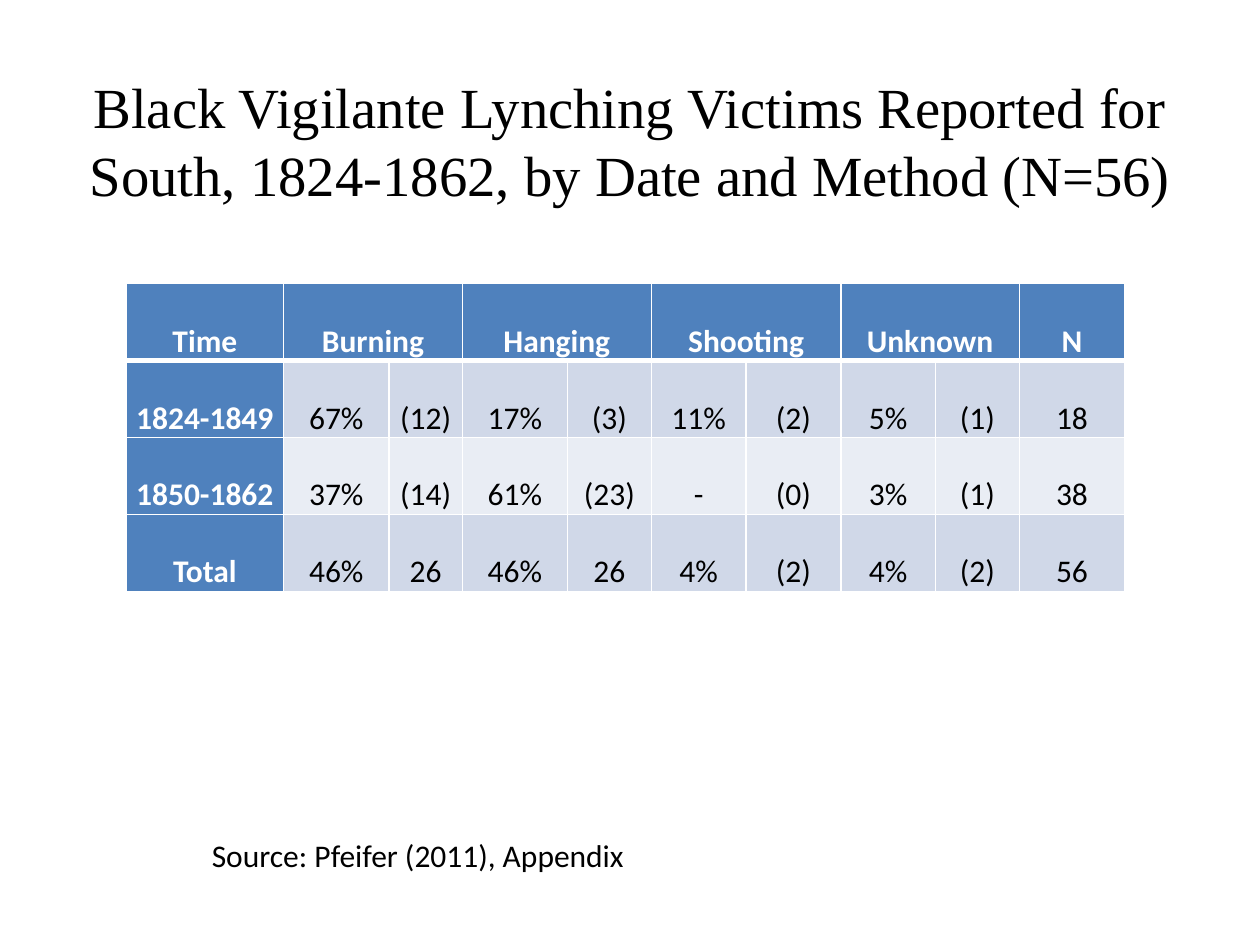
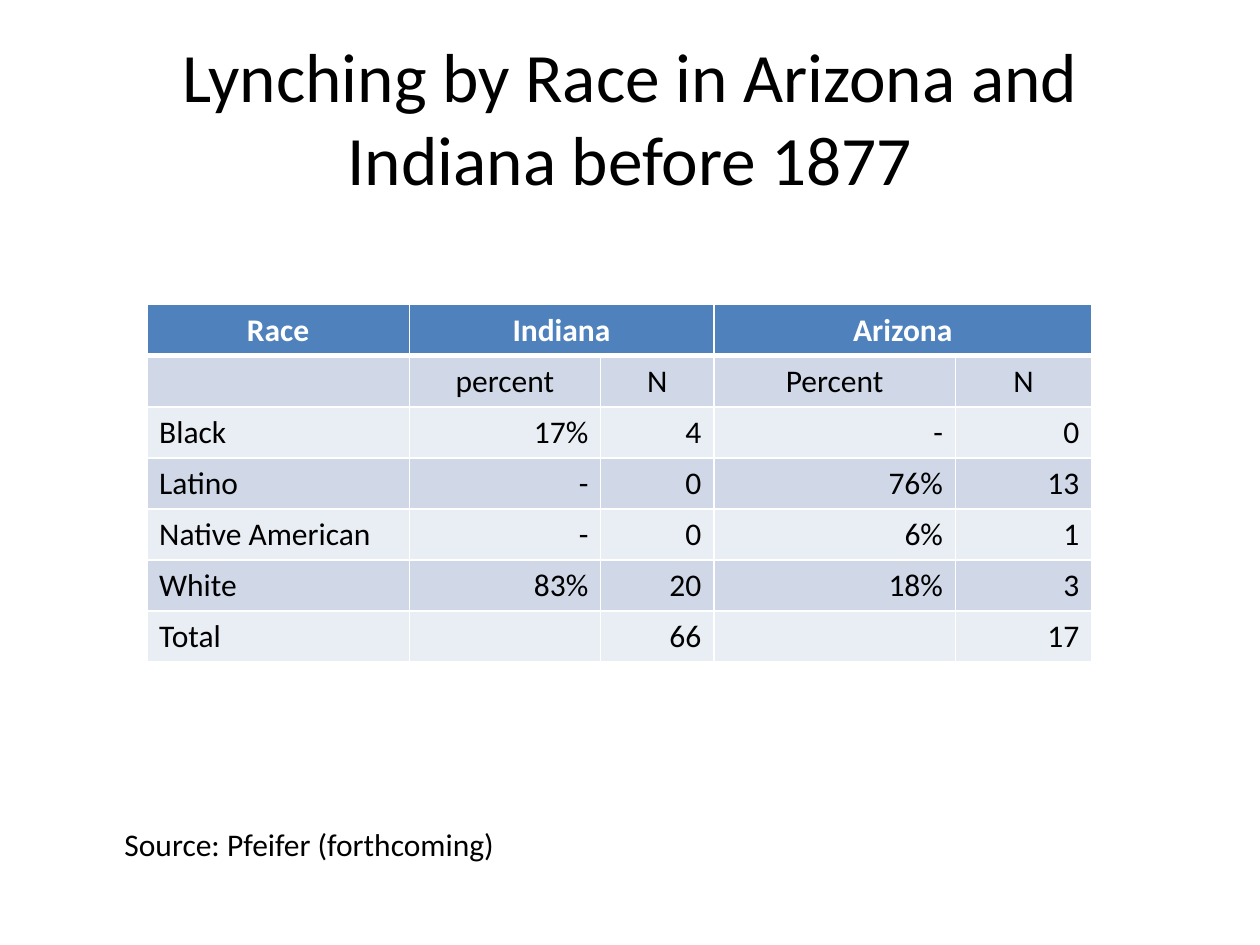
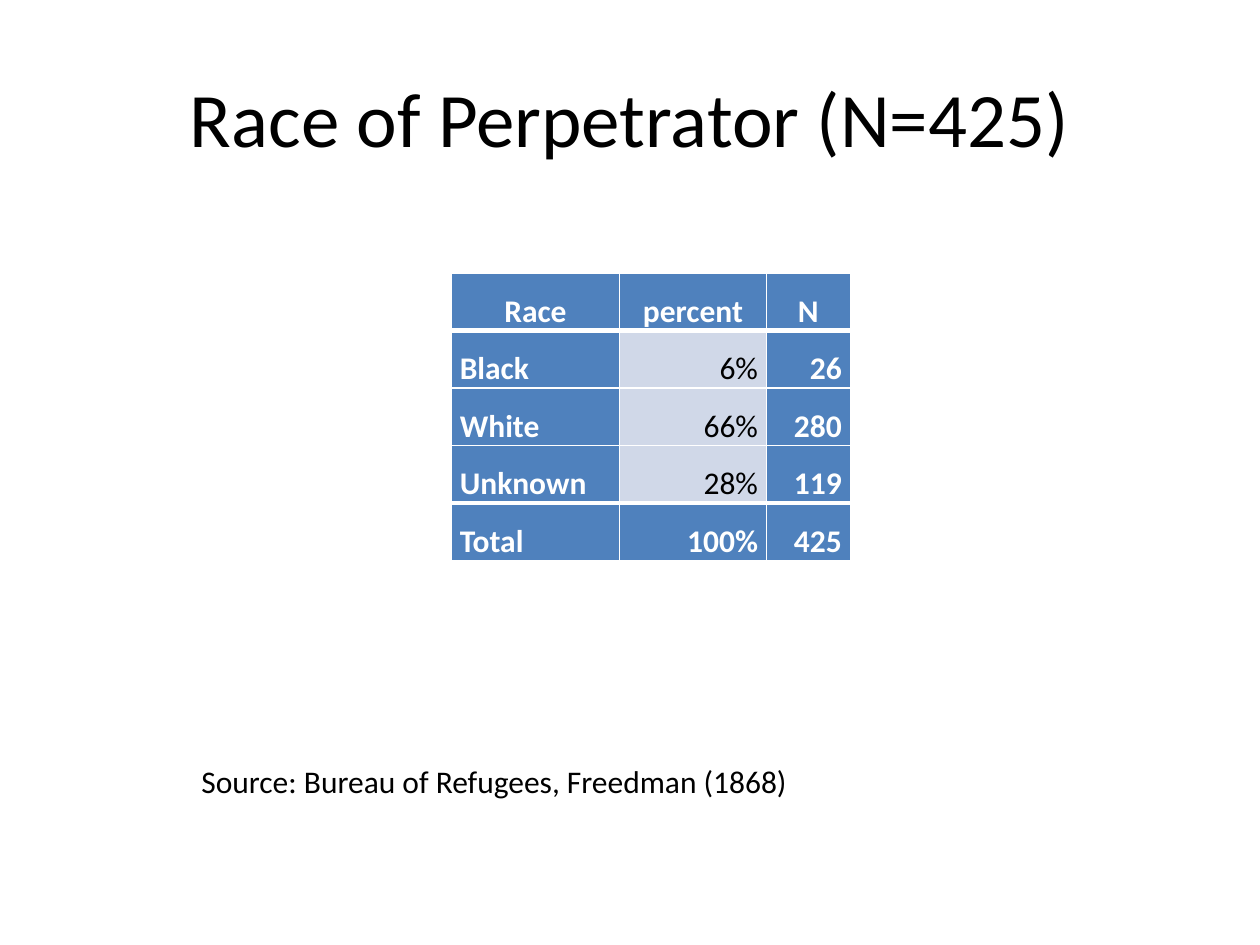
from dataclasses import dataclass

from lxml import etree
from pptx import Presentation
from pptx.dml.color import RGBColor
from pptx.enum.text import MSO_ANCHOR, PP_ALIGN
from pptx.oxml.ns import qn
from pptx.slide import Slide
from pptx.table import _Cell
from pptx.text.text import TextFrame
from pptx.util import Cm, Pt

LEFT, CENTER, RIGHT = PP_ALIGN.LEFT, PP_ALIGN.CENTER, PP_ALIGN.RIGHT
TOP, MIDDLE = MSO_ANCHOR.TOP, MSO_ANCHOR.MIDDLE

BLACK = RGBColor(0x00, 0x00, 0x00)
WHITE = RGBColor(0xFF, 0xFF, 0xFF)
ACCENT = RGBColor(0x4F, 0x81, 0xBD)
BAND_DARK = RGBColor(0xD0, 0xD8, 0xE8)
BAND_LIGHT = RGBColor(0xE9, 0xED, 0xF4)

SANS = "Calibri"
SERIF = "Times New Roman"
THIN, THICK = Pt(1), Pt(3)


@dataclass(frozen=True)
class Title:
    text: str
    size: float
    font: str = SANS
    top_margin: float = 0.13


@dataclass(frozen=True)
class SourceNote:
    text: str
    left: float
    top: float
    width: float
    wrap: bool = False


@dataclass(frozen=True)
class DataTable:
    left: float
    top: float
    row_height: float
    column_widths: tuple[float, ...]
    rows: tuple[tuple[str | None, ...], ...]
    centered_rows: int = 1
    accent_columns: tuple[int, ...] = ()
    accent_total: bool = False
    bands: tuple[RGBColor, ...] = (BAND_DARK, BAND_LIGHT)
    line_spacing: float = 1.0
    anchor: MSO_ANCHOR = TOP
    side_margin: float = 0.25
    end_margin: float = 0.13


@dataclass(frozen=True)
class TableSlide:
    title: Title
    table: DataTable
    source: SourceNote


TABLE_SLIDES = (
    TableSlide(
        Title(
            "Black Vigilante Lynching Victims Reported for South, 1824-1862, "
            "by Date and Method (N=56)",
            32.4, SERIF, top_margin=1.07,
        ),
        DataTable(
            2.54, 5.72, 1.55,
            (3.18, 2.12, 1.48, 2.12, 1.69, 1.91, 1.91, 1.91, 1.69, 2.12),
            (
                ("Time", "Burning", None, "Hanging", None,
                 "Shooting", None, "Unknown", None, "N"),
                ("1824-1849", "67%", "(12)", "17%", "(3)", "11%", "(2)", "5%", "(1)", "18"),
                ("1850-1862", "37%", "(14)", "61%", "(23)", "-", "(0)", "3%", "(1)", "38"),
                ("Total", "46%", "26", "46%", "26", "4%", "(2)", "4%", "(2)", "56"),
            ),
            centered_rows=4, accent_columns=(0,), line_spacing=2.0,
            anchor=MIDDLE, side_margin=0.17, end_margin=0,
        ),
        SourceNote("Source: Pfeifer (2011), Appendix", 4.02, 16.72, 8.92),
    ),
    TableSlide(
        Title("Lynching by Race in Arizona and Indiana before 1877", 39.6),
        DataTable(
            2.96, 6.14, 1.03,
            (5.29, 3.86, 2.28, 4.87, 2.75),
            (
                ("Race", "Indiana", None, "Arizona", None),
                ("", "percent", "N", "Percent", "N"),
                ("Black", "17%", "4", "-", "0"),
                ("Latino", "-", "0", "76%", "13"),
                ("Native American", "-", "0", "6%", "1"),
                ("White", "83%", "20", "18%", "3"),
                ("Total", "", "66", "", "17"),
            ),
            centered_rows=2,
        ),
        SourceNote("Source: Pfeifer (forthcoming)", 2.26, 16.51, 11.07, wrap=True),
    ),
    TableSlide(
        Title("Race of Perpetrator (N=425)", 44),
        DataTable(
            9.1, 5.5, 1.16,
            (3.39, 2.96, 1.69),
            (
                ("Race", "percent", "N"),
                ("Black", "6%", "26"),
                ("White", "66%", "280"),
                ("Unknown", "28%", "119"),
                ("Total", "100%", "425"),
            ),
            accent_columns=(0, 2), accent_total=True, bands=(BAND_DARK,),
            line_spacing=1.5, side_margin=0.17, end_margin=0,
        ),
        SourceNote("Source: Bureau of Refugees, Freedman (1868)", 3.81, 15.24, 12.62),
    ),
)


def write_text(
    text_frame: TextFrame,
    text: str,
    *,
    size: float = 18,
    font: str = SANS,
    color: RGBColor = BLACK,
    bold: bool = False,
    align: PP_ALIGN = LEFT,
    line_spacing: float = 1.0,
) -> None:
    paragraph = text_frame.paragraphs[0]
    paragraph.alignment = align
    paragraph.line_spacing = line_spacing
    run = paragraph.add_run()
    run.text = text
    run.font.size = Pt(size)
    run.font.name = font
    run.font.bold = bold
    run.font.color.rgb = color


def set_borders(cell: _Cell, top: int, bottom: int) -> None:
    properties = cell._tc.get_or_add_tcPr()
    widths = {"a:lnL": THIN, "a:lnR": THIN, "a:lnT": top, "a:lnB": bottom}
    for position, (tag, width) in enumerate(widths.items()):
        line = etree.Element(qn(tag), w=str(int(width)))
        fill = etree.SubElement(line, qn("a:solidFill"))
        etree.SubElement(fill, qn("a:srgbClr"), val=str(WHITE))
        properties.insert(position, line)


def draw_title(slide: Slide, title: Title) -> None:
    shape = slide.shapes.add_textbox(Cm(1.27), Cm(0.76), Cm(22.86), Cm(3.18))
    text_frame = shape.text_frame
    text_frame.word_wrap = True
    text_frame.vertical_anchor = MIDDLE
    text_frame.margin_top = Cm(title.top_margin)
    write_text(text_frame, title.text, size=title.size, font=title.font, align=CENTER)


def draw_source(slide: Slide, source: SourceNote) -> None:
    shape = slide.shapes.add_textbox(
        Cm(source.left), Cm(source.top), Cm(source.width), Cm(1.03)
    )
    shape.text_frame.word_wrap = source.wrap
    write_text(shape.text_frame, source.text)


def draw_table(slide: Slide, data: DataTable) -> None:
    row_count = len(data.rows)
    table = slide.shapes.add_table(
        row_count, len(data.column_widths), Cm(data.left), Cm(data.top),
        Cm(sum(data.column_widths)), Cm(data.row_height * row_count),
    ).table
    for column, width in zip(table.columns, data.column_widths):
        column.width = Cm(width)
    thick_edges = {1, row_count - 1} if data.accent_total else {1}
    accent_rows = {0, row_count - 1} if data.accent_total else {0}

    for row_index, values in enumerate(data.rows):
        table.rows[row_index].height = Cm(data.row_height)
        band = data.bands[(row_index - 1) % len(data.bands)]
        for column_index, value in enumerate(values):
            cell = table.cell(row_index, column_index)
            accented = row_index in accent_rows or column_index in data.accent_columns
            cell.fill.solid()
            cell.fill.fore_color.rgb = ACCENT if accented else band
            set_borders(
                cell,
                top=THICK if row_index in thick_edges else THIN,
                bottom=THICK if row_index + 1 in thick_edges else THIN,
            )
            cell.vertical_anchor = data.anchor
            cell.margin_left = cell.margin_right = Cm(data.side_margin)
            cell.margin_top = cell.margin_bottom = Cm(data.end_margin)
            if value is None:
                table.cell(row_index, column_index - 1).merge(cell)
            elif value:
                body_align = RIGHT if column_index else LEFT
                write_text(
                    cell.text_frame, value,
                    color=WHITE if accented else BLACK,
                    bold=accented,
                    align=CENTER if row_index < data.centered_rows else body_align,
                    line_spacing=data.line_spacing,
                )


def main() -> None:
    presentation = Presentation()
    presentation.slide_width = Cm(25.4)
    presentation.slide_height = Cm(19.05)
    blank_layout = presentation.slide_layouts[6]
    for table_slide in TABLE_SLIDES:
        slide = presentation.slides.add_slide(blank_layout)
        draw_title(slide, table_slide.title)
        draw_table(slide, table_slide.table)
        draw_source(slide, table_slide.source)
    presentation.save("out.pptx")


if __name__ == "__main__":
    main()
